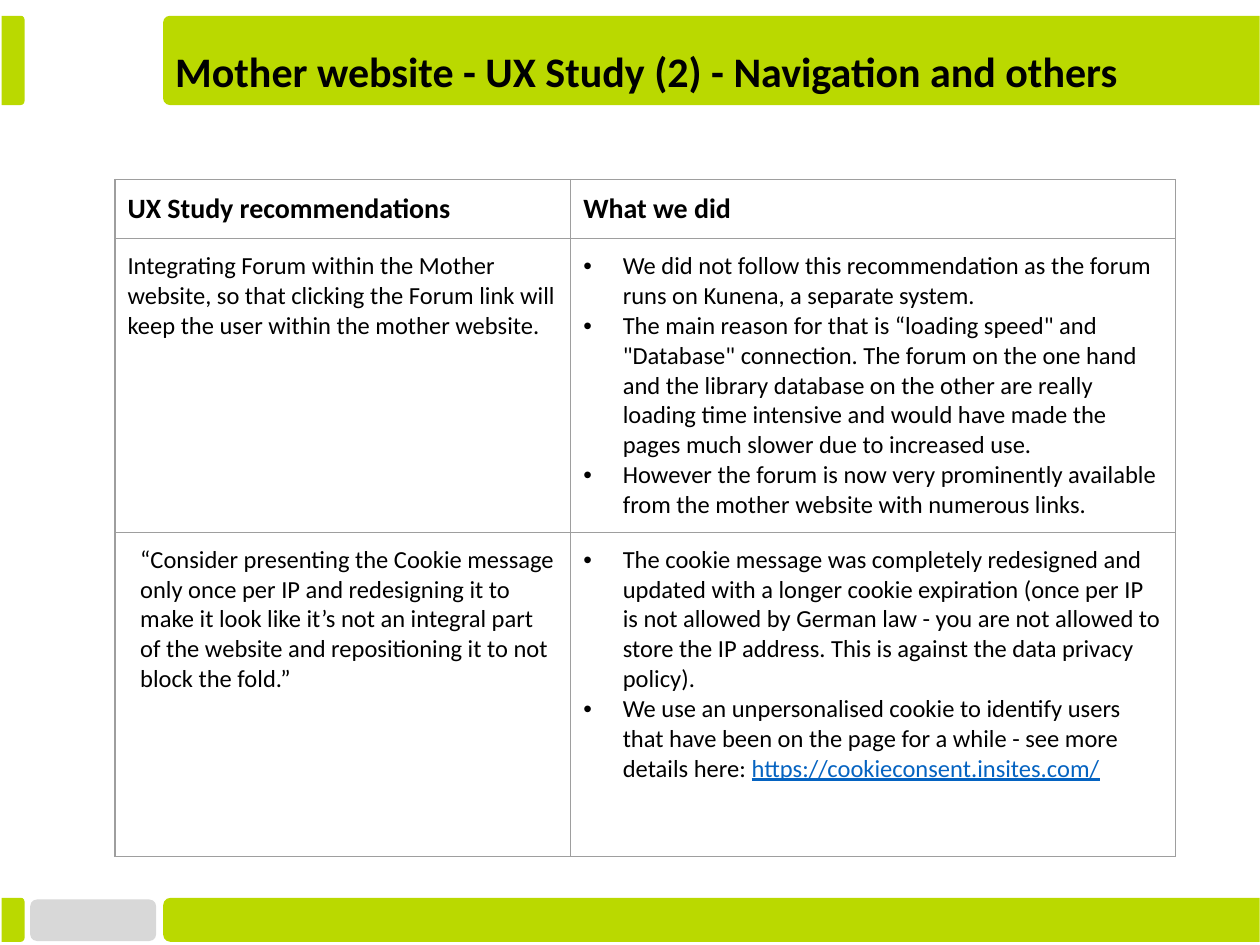
import lxml.etree
import pptx
import pptx.dml.color
import pptx.enum.shapes
import pptx.enum.text
import pptx.oxml.ns
import pptx.util

Pt = pptx.util.Pt
SHAPES = pptx.enum.shapes.MSO_SHAPE
LIME, GREY, BLACK, WHITE = "BAD900", "D8D8D8", "000000", "FFFFFF"
BORDER, LINK = "9E9E9E", "0563C1"
INSET = 7.2

HEADINGS = ["UX Study recommendations", "What we did"]
FORUM_ADVICE = (
    "Integrating Forum within the Mother website, so that clicking the Forum link "
    "will keep the user within the mother website."
)
FORUM_ACTIONS = [
    "We did not follow this recommendation as the forum runs on Kunena, a separate system.",
    "The main reason for that is “loading speed\" and \"Database\" connection. The forum on "
    "the one hand and the library database on the other are really loading time intensive "
    "and would have made the pages much slower due to increased use.",
    "However the forum is now very prominently available from the mother website with "
    "numerous links.",
]
COOKIE_ADVICE = (
    "“Consider presenting the Cookie message only once per IP and redesigning it to make it "
    "look like it’s not an integral part of the website and repositioning it to not block "
    "the fold.”"
)
COOKIE_ACTIONS = [
    "The cookie message was completely redesigned and updated with a longer cookie "
    "expiration (once per IP is not allowed by German law - you are not allowed to store "
    "the IP address. This is against the data privacy policy).",
    "We use an unpersonalised cookie to identify users that have been on the page for a "
    "while - see more details here: ",
]
COOKIE_LINK = "https://cookieconsent.insites.com/"


def color(hex_string):
    return pptx.dml.color.RGBColor.from_string(hex_string)


def add_element(parent, tag, **attributes):
    element = lxml.etree.SubElement(parent, pptx.oxml.ns.qn(tag))
    for name, value in attributes.items():
        element.set(name, str(value))
    return element


def style_font(paragraph, size, bold=False):
    font = paragraph.font
    font.name, font.size, font.bold = "Calibri", Pt(size), bold
    font.color.rgb = color(BLACK)


def set_insets(holder):
    holder.margin_left = holder.margin_right = Pt(INSET)
    holder.margin_top = holder.margin_bottom = Pt(INSET)


def add_block(slide, preset, left, top, width, height, fill, corner):
    shape = slide.shapes.add_shape(preset, Pt(left), Pt(top), Pt(width), Pt(height))
    shape.shadow.inherit = False
    shape.fill.solid()
    shape.fill.fore_color.rgb = color(fill)
    shape.line.fill.background()
    shape.adjustments[0] = corner
    return shape


def add_bar(slide, left, top, width, height, rotation, corner):
    """Place a bar whose rounded end faces left (270) or right (90)."""
    # A quarter turn swaps the sides around the same centre
    shift = (width - height) / 2
    bar = add_block(slide, SHAPES.ROUND_2_SAME_RECTANGLE, left + shift, top - shift,
                    height, width, LIME, corner)
    bar.adjustments[1] = 0
    bar.rotation = rotation


def add_band(slide, top, height, corner):
    """Draw the wide bar and the short stub at the left edge."""
    add_bar(slide, 93.25, top, 626.5, height, 270, corner)
    add_bar(slide, 1, top, 13, height, 90, 0.167)


def add_title(slide, left, top, width, height):
    box = slide.shapes.add_textbox(Pt(left), Pt(top), Pt(width), Pt(height))
    frame = box.text_frame
    frame.word_wrap = True
    frame.vertical_anchor = pptx.enum.text.MSO_ANCHOR.MIDDLE
    set_insets(frame)
    paragraph = frame.paragraphs[0]
    paragraph.text = "Mother website - UX Study (2) - Navigation and others"
    paragraph.line_spacing = 0.9
    style_font(paragraph, 24, bold=True)


def set_borders(cell):
    properties = cell._tc.get_or_add_tcPr()
    for position, side in enumerate(("a:lnL", "a:lnR", "a:lnT", "a:lnB")):
        line = lxml.etree.Element(pptx.oxml.ns.qn(side), w=str(Pt(0.75)))
        add_element(add_element(line, "a:solidFill"), "a:srgbClr", val=BORDER)
        properties.insert(position, line)


def fill_cell(cell, texts, size=14, bold=False, indent=0, bulleted=False):
    set_insets(cell)
    cell.fill.solid()
    cell.fill.fore_color.rgb = color(WHITE)
    set_borders(cell)
    frame = cell.text_frame
    for index, text in enumerate(texts):
        paragraph = frame.add_paragraph() if index else frame.paragraphs[0]
        paragraph.text = text
        properties = paragraph._p.get_or_add_pPr()
        properties.set("marL", str(Pt(indent)))
        if bulleted:
            properties.set("indent", str(-Pt(indent)))
            add_element(add_element(properties, "a:buClr"), "a:srgbClr", val=BLACK)
            add_element(properties, "a:buFont", typeface="Arial")
            add_element(properties, "a:buChar", char="•")
        style_font(paragraph, size, bold)


def add_study_table(slide, left, top, column_widths, row_heights):
    frame = slide.shapes.add_table(len(row_heights), len(column_widths), Pt(left), Pt(top),
                                   Pt(sum(column_widths)), Pt(sum(row_heights)))
    table = frame.table
    for column, width in zip(table.columns, column_widths):
        column.width = Pt(width)
    for row, height in zip(table.rows, row_heights):
        row.height = Pt(height)

    # Heading row
    for index, heading in enumerate(HEADINGS):
        fill_cell(table.cell(0, index), [heading], size=16, bold=True)

    # Recommendations on the left, actions on the right
    fill_cell(table.cell(1, 0), [FORUM_ADVICE])
    fill_cell(table.cell(2, 0), [COOKIE_ADVICE], indent=7.2)
    for row, actions in enumerate((FORUM_ACTIONS, COOKIE_ACTIONS), start=1):
        fill_cell(table.cell(row, 1), actions, indent=22.5, bulleted=True)

    # Web address closing the last action
    run = table.cell(2, 1).text_frame.paragraphs[-1].add_run()
    run.text = COOKIE_LINK
    run.font.underline = True
    run.font.color.rgb = color(LINK)


def main():
    presentation = pptx.Presentation()
    presentation.slide_width, presentation.slide_height = Pt(720), Pt(540)
    slide = presentation.slides.add_slide(presentation.slide_layouts[6])

    # Footer and header bands
    add_block(slide, SHAPES.ROUNDED_RECTANGLE, 17.25, 514, 72, 23.75, GREY, 0.167)
    add_band(slide, 513, 25.2, 0.167)
    add_band(slide, 9, 51, 0.073)

    # Content
    add_study_table(slide, 65.7, 102.5, [260.5, 345.5], [33.5, 167.75, 185])
    add_title(slide, 93, 18.7, 627, 46.8)

    presentation.save("out.pptx")


if __name__ == "__main__":
    main()
